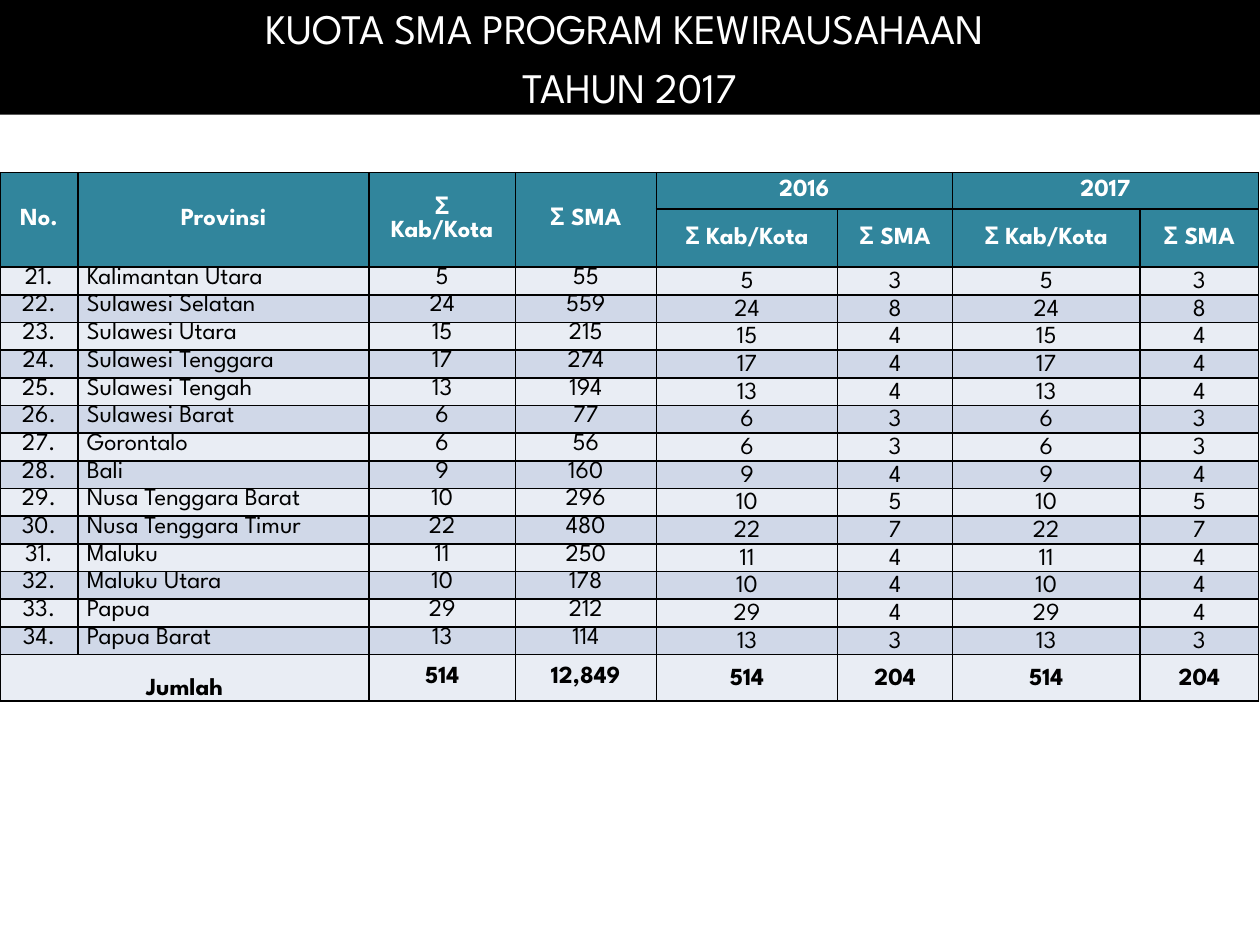
from lxml import etree
from pptx import Presentation
from pptx.dml.color import RGBColor
from pptx.enum.text import MSO_ANCHOR, MSO_AUTO_SIZE, PP_ALIGN
from pptx.oxml.ns import qn
from pptx.util import Inches, Pt

LEFT, CENTER = PP_ALIGN.LEFT, PP_ALIGN.CENTER
TOP, MIDDLE, BOTTOM = MSO_ANCHOR.TOP, MSO_ANCHOR.MIDDLE, MSO_ANCHOR.BOTTOM
TITLE_ONLY = 5

FONT = "League Spartan"
BLACK, WHITE, TEAL = "000000", "FFFFFF", "31859C"
BANDS = ("E9EDF4", "D0D8E8")

TITLE_LINES = ("KUOTA SMA PROGRAM KEWIRAUSAHAAN ", "TAHUN 2017")
COLUMN_WIDTHS = (0.62, 2.31, 1.16, 1.12, 1.44, 0.91, 1.49, 0.94)
HEADER_HEIGHTS = (0.29, 0.46)
BODY_HEIGHT, TOTAL_HEIGHT = 0.22, 0.37
FIRST_NUMBER = 21
FIRST_QUOTA_COLUMN = 4
HEADINGS = ("No.", "Provinsi", "Σ Kab/Kota", "Σ SMA")
YEARS = ("2016", "2017")

# Province, districts, schools, school quota (the same in both years)
PROVINCES = (
    ("Kalimantan Utara", "5", "55", "3"),
    ("Sulawesi Selatan", "24", "559", "8"),
    ("Sulawesi Utara", "15", "215", "4"),
    ("Sulawesi Tenggara", "17", "274", "4"),
    ("Sulawesi Tengah", "13", "194", "4"),
    ("Sulawesi Barat", "6", "77", "3"),
    ("Gorontalo", "6", "56", "3"),
    ("Bali", "9", "160", "4"),
    ("Nusa Tenggara Barat", "10", "296", "5"),
    ("Nusa Tenggara Timur", "22", "480", "7"),
    ("Maluku", "11", "250", "4"),
    ("Maluku Utara", "10", "178", "4"),
    ("Papua", "29", "212", "4"),
    ("Papua Barat", "13", "114", "3"),
)
TOTAL = ("Jumlah", "514", "12,849", "204")


def rgb(color):
    return RGBColor.from_string(color)


def fill_with(item, color):
    item.fill.solid()
    item.fill.fore_color.rgb = rgb(color)


def format_paragraph(paragraph, size, color, bold=False, align=CENTER):
    paragraph.alignment = align
    font = paragraph.font
    font.name, font.size, font.bold = FONT, Pt(size), bold
    font.color.rgb = rgb(color)


def add_borders(cell):
    properties = cell._tc.get_or_add_tcPr()
    for position, side in enumerate(("lnL", "lnR", "lnT", "lnB")):
        line = etree.Element(qn(f"a:{side}"), w=str(Pt(1)))
        solid = etree.SubElement(line, qn("a:solidFill"))
        etree.SubElement(solid, qn("a:srgbClr"), val=BLACK)
        properties.insert(position, line)


def write_header(cell, text):
    cell.text = text
    cell.vertical_anchor = MIDDLE
    format_paragraph(cell.text_frame.paragraphs[0], 14, WHITE, bold=True)


def write_value(cell, text, anchor, align=CENTER, bold=False, spacing=None):
    cell.text = text
    cell.vertical_anchor = anchor
    cell.margin_left = cell.margin_right = Inches(0.07)
    cell.margin_top = cell.margin_bottom = 0
    paragraph = cell.text_frame.paragraphs[0]
    format_paragraph(paragraph, 14, BLACK, bold, align)
    paragraph.line_spacing = spacing


def write_quotas(table, row, districts, quota, bold=False):
    for column, text in enumerate((districts, quota) * len(YEARS), FIRST_QUOTA_COLUMN):
        write_value(table.cell(row, column), text, MIDDLE, bold=bold, spacing=1.15)


def write_headers(table):
    for column, text in enumerate(HEADINGS):
        table.cell(0, column).merge(table.cell(1, column))
        write_header(table.cell(0, column), text)
    for index, year in enumerate(YEARS):
        column = FIRST_QUOTA_COLUMN + 2 * index
        table.cell(0, column).merge(table.cell(0, column + 1))
        write_header(table.cell(0, column), year)
        for offset, text in enumerate(HEADINGS[2:]):
            write_header(table.cell(1, column + offset), text)


def write_provinces(table):
    for index, (province, districts, schools, quota) in enumerate(PROVINCES):
        row = len(HEADER_HEIGHTS) + index
        number = f"{FIRST_NUMBER + index}."
        for column, text in enumerate((number, province, districts, schools)):
            align = LEFT if column == 1 else CENTER
            write_value(table.cell(row, column), text, TOP, align)
        write_quotas(table, row, districts, quota)


def write_total(table):
    row = len(table.rows) - 1
    label, districts, schools, quota = TOTAL
    table.cell(row, 0).merge(table.cell(row, 1))
    write_value(table.cell(row, 0), label, BOTTOM, bold=True)
    write_value(table.cell(row, 2), districts, MIDDLE, bold=True)
    write_value(table.cell(row, 3), schools, MIDDLE, bold=True)
    write_quotas(table, row, districts, quota, bold=True)


def add_quota_table(slide):
    heights = (*HEADER_HEIGHTS, *[BODY_HEIGHT] * len(PROVINCES), TOTAL_HEIGHT)
    table = slide.shapes.add_table(
        len(heights), len(COLUMN_WIDTHS), 0, Inches(1.37),
        Inches(sum(COLUMN_WIDTHS)), Inches(sum(heights))).table
    table.first_row = table.horz_banding = False
    for column, width in zip(table.columns, COLUMN_WIDTHS):
        column.width = Inches(width)
    for index, (row, height) in enumerate(zip(table.rows, heights)):
        row.height = Inches(height)
        color = TEAL if index < len(HEADER_HEIGHTS) else BANDS[index % 2]
        for cell in row.cells:
            fill_with(cell, color)
            add_borders(cell)
            # Keeps empty merged cells from stretching their rows
            cell.margin_top = cell.margin_bottom = 0
            format_paragraph(cell.text_frame.paragraphs[0], 14, BLACK)
    write_headers(table)
    write_provinces(table)
    write_total(table)


def add_title(slide):
    title = slide.shapes.title
    title.left, title.top = 0, 0
    title.width, title.height = Inches(10), Inches(0.91)
    fill_with(title, BLACK)
    frame = title.text_frame
    frame.text = "\n".join(TITLE_LINES)
    frame.auto_size = MSO_AUTO_SIZE.NONE
    frame.vertical_anchor = MIDDLE
    for paragraph in frame.paragraphs:
        format_paragraph(paragraph, 24, WHITE)
    frame.paragraphs[1].space_before = Pt(4.5)


def main():
    presentation = Presentation()
    presentation.slide_width, presentation.slide_height = Inches(10), Inches(7.5)
    slide = presentation.slides.add_slide(presentation.slide_layouts[TITLE_ONLY])
    add_title(slide)
    add_quota_table(slide)
    presentation.save("out.pptx")


if __name__ == "__main__":
    main()
